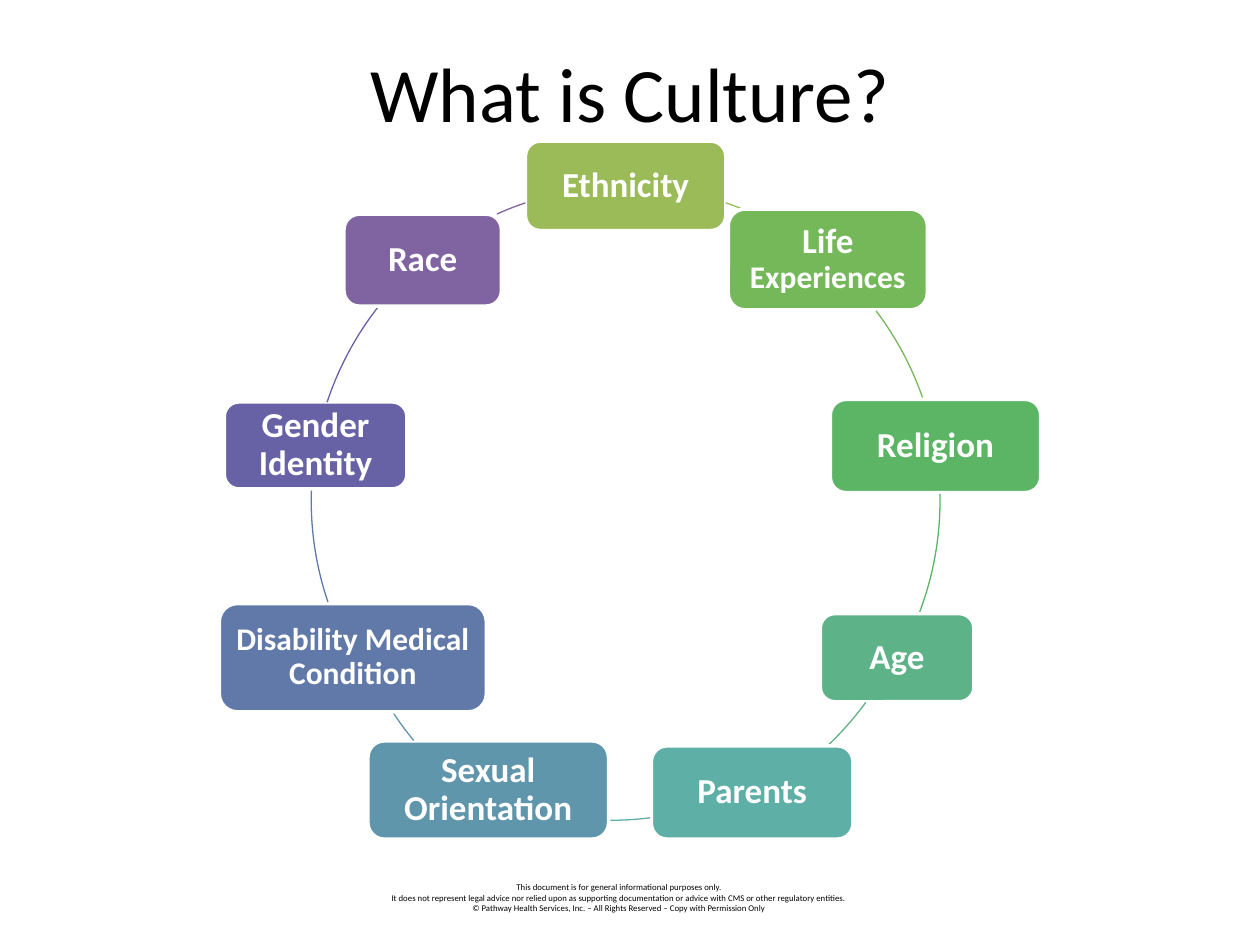
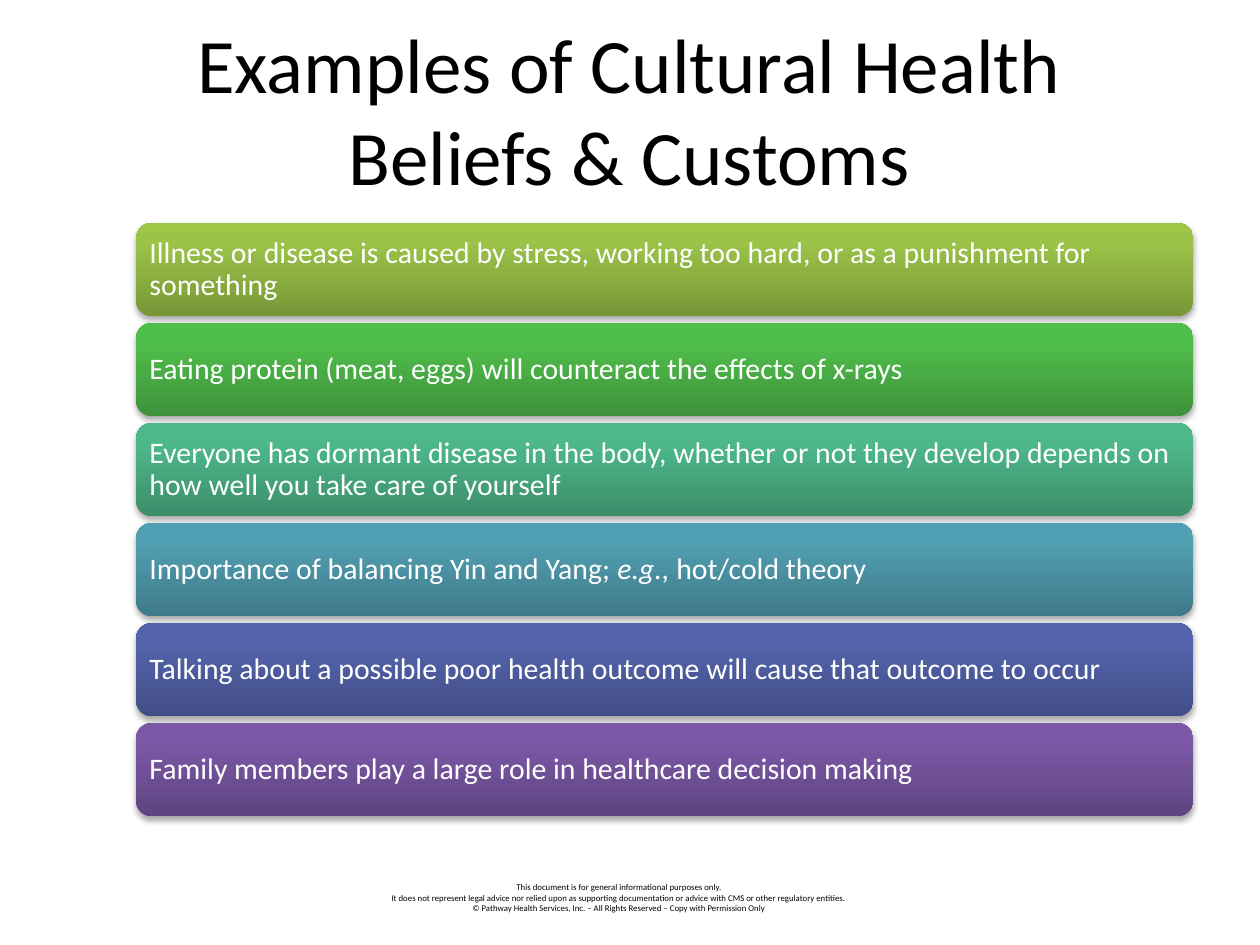
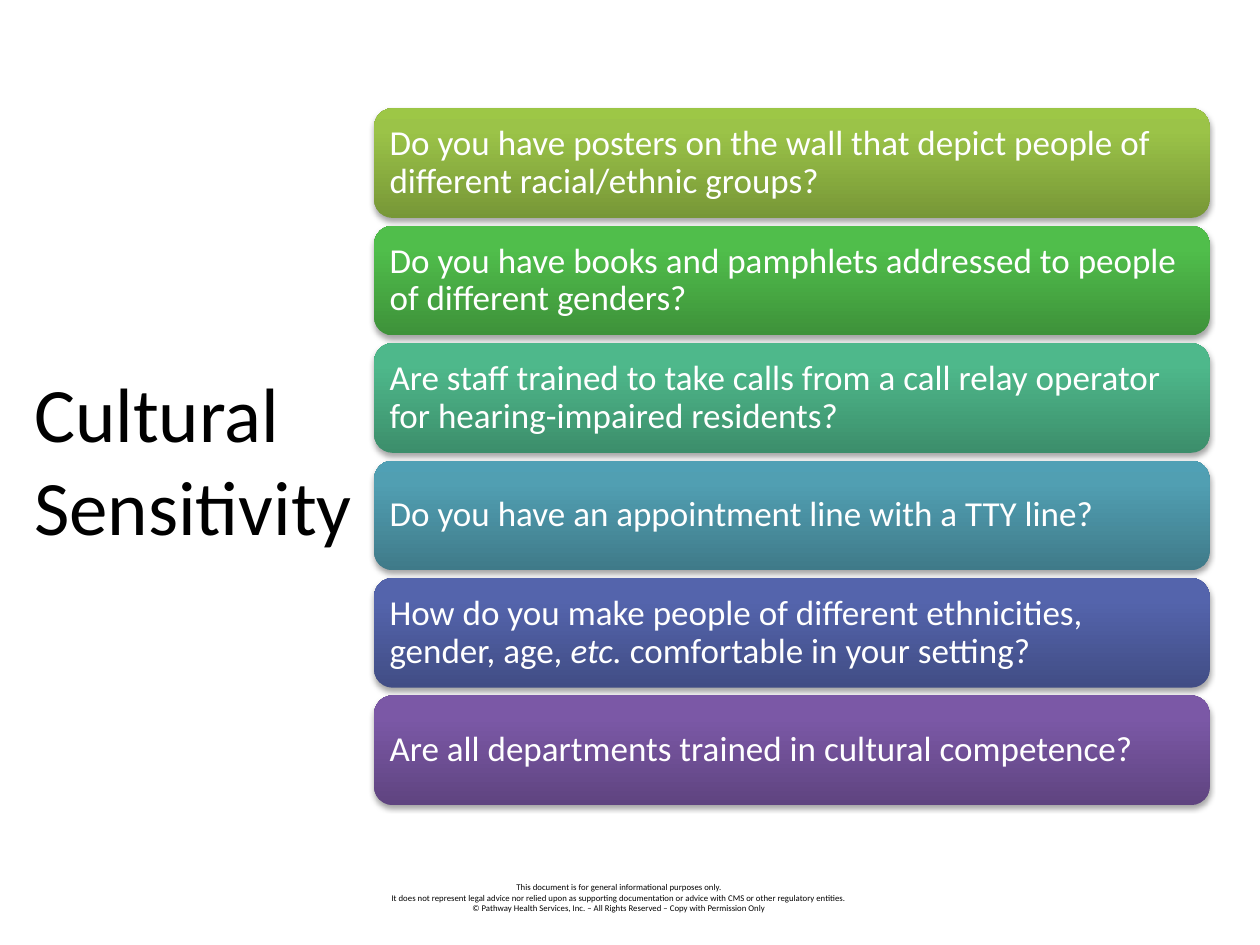
from copy import deepcopy
from math import atan2, degrees

from lxml.etree import SubElement
from pptx import Presentation
from pptx.dml.color import RGBColor
from pptx.enum.shapes import MSO_SHAPE
from pptx.enum.text import MSO_ANCHOR, MSO_AUTO_SIZE, PP_ALIGN
from pptx.oxml.ns import qn
from pptx.util import Inches, Pt

FONT = "Calibri"
BLACK = RGBColor(0x00, 0x00, 0x00)
WHITE = RGBColor(0xFF, 0xFF, 0xFF)

# Bottom, upper and top colour of each band, in order down the page
BAND_GRADIENTS = [
    [RGBColor.from_string(code) for code in codes.split()]
    for codes in (
        "779737 9BC348 9DC746",
        "3E923A 50BE4B 4FC149",
        "3C8E6B 4EB88B 4CBB8C",
        "3F7A89 519FB2 50A0B5",
        "414D85 5464AC 5363AF",
        "5F4480 7B58A6 7C57A8",
    )
]
GRADIENT_POSITIONS = (0, 0.8, 1)

RING_DIAMETER = 4.99
RING_CORNER = (2.47, 1.48)

# Spans, colour, box (left, top, width, height),
# then the arc to the next box: start, end and the corner of its circle
CULTURE_PARTS = [
    ([("Ethnicity", 20)], RGBColor(0x9B, 0xBB, 0x59), (4.17, 1.12, 1.59, 0.71),
     (5.76, 1.61), (5.90, 1.66), RING_CORNER),
    ([("Life ", 20), ("Experiences", 18)], RGBColor(0x75, 0xB8, 0x5A), (5.78, 1.66, 1.58, 0.80),
     (6.95, 2.47), (7.32, 3.16), RING_CORNER),
    ([("Religion", 20)], RGBColor(0x5C, 0xB5, 0x65), (6.59, 3.17, 1.67, 0.74),
     (7.46, 3.92), (7.30, 4.86), RING_CORNER),
    ([("Age", 20)], RGBColor(0x5D, 0xB2, 0x87), (6.51, 4.87, 1.22, 0.70),
     (6.88, 5.58), (6.58, 5.92), (2.36, 1.61)),
    ([("Parents", 20)], RGBColor(0x5E, 0xAF, 0xA6), (5.17, 5.92, 1.60, 0.74),
     (5.16, 6.49), (4.84, 6.51), (2.35, 1.52)),
    ([("Sexual Orientation", 20)], RGBColor(0x60, 0x96, 0xAC), (2.92, 5.88, 1.91, 0.78),
     (3.28, 5.88), (3.11, 5.65), (2.71, 1.79)),
    ([("Disability Medical Condition", 18)], RGBColor(0x61, 0x79, 0xA8), (1.74, 4.79, 2.12, 0.86),
     (2.60, 4.78), (2.47, 3.89), RING_CORNER),
    ([("Gender Identity", 20)], RGBColor(0x67, 0x62, 0xA5), (1.78, 3.19, 1.45, 0.69),
     (2.59, 3.19), (3.00, 2.43), RING_CORNER),
    ([("Race", 20)], RGBColor(0x80, 0x64, 0xA2), (2.73, 1.70, 1.25, 0.73),
     (3.94, 1.69), (4.17, 1.61), RING_CORNER),
]

# Each band is a list of spans; every second span is italic
BELIEFS = [
    ["Illness or disease is caused by stress, working too hard, or as a punishment for something"],
    ["Eating protein (meat, eggs) will counteract the effects of x-rays"],
    ["Everyone has dormant disease in the body, whether or not they develop depends on "
     "how well you take care of yourself"],
    ["Importance of balancing Yin and Yang; ", "e.g., ", "hot/cold theory"],
    ["Talking about a possible poor health outcome will cause that outcome to occur"],
    ["Family members play a large role in healthcare decision making"],
]
QUESTIONS = [
    ["Do you have posters on the wall that depict people of different racial/ethnic groups?"],
    ["Do you have books and pamphlets addressed to people of different genders?"],
    ["Are staff trained to take calls from a call relay operator for hearing-impaired residents?"],
    ["Do you have an appointment line with a TTY line?"],
    ["How do you make people of different ethnicities, gender, age, ", "etc.",
     " comfortable in your setting?"],
    ["Are all departments trained in cultural competence?"],
]
FOOTER_LINES = [
    "This document is for general informational purposes only.",
    "It does not represent legal advice nor relied upon as supporting documentation "
    "or advice with CMS or other regulatory entities.",
    "© Pathway Health Services, Inc. – All Rights Reserved – Copy with Permission Only",
]


def set_font(font, size, color):
    font.name = FONT
    font.size = Pt(size)
    font.color.rgb = color


def add_page(deck, title, left, top, width, height, align=PP_ALIGN.CENTER):
    page = deck.slides.add_slide(deck.slide_layouts[5])
    box = page.shapes.title
    box.left, box.top = Inches(left), Inches(top)
    box.width, box.height = Inches(width), Inches(height)
    frame = box.text_frame
    frame.text = title
    frame.auto_size = MSO_AUTO_SIZE.NONE
    frame.vertical_anchor = MSO_ANCHOR.MIDDLE
    para = frame.paragraphs[0]
    para.alignment = align
    set_font(para.font, 44, BLACK)
    return page


def move_footer_to_layout(page):
    """Make the footer and hand it to the layout, so that every page shows it."""
    box = page.shapes.add_textbox(Inches(2.75), Inches(6.95), Inches(4.33), Inches(0.35))
    frame = box.text_frame
    frame.word_wrap = True
    frame.auto_size = MSO_AUTO_SIZE.SHAPE_TO_FIT_TEXT
    frame.text = "\n".join(FOOTER_LINES)
    for para in frame.paragraphs:
        para.alignment = PP_ALIGN.CENTER
        set_font(para.font, 5, BLACK)
    page.slide_layout.shapes.element.append(box.element)


def add_rounded_box(page, left, top, width, height, margin, align):
    """Add a rounded box and return it with its only paragraph."""
    box = page.shapes.add_shape(MSO_SHAPE.ROUNDED_RECTANGLE, Inches(left), Inches(top),
                                Inches(width), Inches(height))
    box.shadow.inherit = False
    frame = box.text_frame
    frame.word_wrap = True
    frame.vertical_anchor = MSO_ANCHOR.MIDDLE
    frame.margin_left = frame.margin_right = Inches(margin)
    frame.margin_top = frame.margin_bottom = Inches(margin)
    para = frame.paragraphs[0]
    para.alignment = align
    para.line_spacing = 0.9
    return box, para


def add_culture_box(page, spans, color, place):
    box, para = add_rounded_box(page, *place, 0.08, PP_ALIGN.CENTER)
    box.fill.solid()
    box.fill.fore_color.rgb = color
    box.line.color.rgb = WHITE
    box.line.width = Pt(2)
    for text, size in spans:
        span = para.add_run()
        span.text = text
        set_font(span.font, size, WHITE)
        span.font.bold = True


def add_ring_arc(page, color, start, end, corner):
    """Draw the clockwise part of a circle from start to end."""
    left, top = corner
    radius = RING_DIAMETER / 2
    arc = page.shapes.add_shape(MSO_SHAPE.ARC, Inches(left), Inches(top),
                                Inches(RING_DIAMETER), Inches(RING_DIAMETER))
    arc.shadow.inherit = False
    arc.fill.background()
    arc.line.color.rgb = color
    arc.line.width = Pt(0.75)
    for index, (x, y) in enumerate((start, end)):
        angle = degrees(atan2(y - top - radius, x - left - radius)) % 360
        arc.adjustments[index] = angle * 0.6  # 60000 units a degree, 100000 a whole


def fill_gradient(box, colors):
    box.fill.gradient()
    box.fill.gradient_angle = 90
    stop_list = box.element.spPr.find(qn("a:gradFill")).find(qn("a:gsLst"))
    stop_list.insert(1, deepcopy(stop_list[0]))
    for stop, position, color in zip(box.fill.gradient_stops, GRADIENT_POSITIONS, colors):
        stop.position = position
        stop.color.rgb = color


def add_soft_shadow(box):
    effects = box.element.spPr.find(qn("a:effectLst"))
    shadow = SubElement(effects, qn("a:outerShdw"), blurRad="40000", dist="23000",
                        dir="5400000", rotWithShape="0")
    color = SubElement(shadow, qn("a:srgbClr"), val="000000")
    SubElement(color, qn("a:alpha"), val="35000")


def add_bands(page, bands, left, top, width, height, bottom, size, margin):
    """Spread equal bands from top to bottom."""
    pitch = (bottom - top - height) / (len(bands) - 1)
    for row, (spans, colors) in enumerate(zip(bands, BAND_GRADIENTS)):
        box, para = add_rounded_box(page, left, top + row * pitch, width, height,
                                    margin, PP_ALIGN.LEFT)
        fill_gradient(box, colors)
        add_soft_shadow(box)
        box.line.fill.background()
        for index, text in enumerate(spans):
            span = para.add_run()
            span.text = text
            if index % 2:
                span.font.italic = True
        set_font(para.font, size, WHITE)


def main():
    deck = Presentation()
    deck.slide_width, deck.slide_height = Inches(10), Inches(7.5)

    page = add_page(deck, "What is Culture?", 0.5, 0.1, 9, 1.25)
    move_footer_to_layout(page)
    for spans, color, place, start, end, corner in CULTURE_PARTS:
        add_culture_box(page, spans, color, place)
        add_ring_arc(page, color, start, end, corner)

    page = add_page(deck, "Examples of Cultural Health Beliefs & Customs", 0.8, 0, 8.39, 1.73)
    add_bands(page, BELIEFS, 1.08, 1.77, 8.39, 0.74, bottom=6.48, size=17, margin=0.07)

    page = add_page(deck, "Cultural Sensitivity", 0.17, 1.67, 2.81, 3.93, PP_ALIGN.LEFT)
    add_bands(page, QUESTIONS, 2.97, 0.86, 6.63, 0.87, bottom=6.39, size=20, margin=0.08)

    deck.save("out.pptx")


if __name__ == "__main__":
    main()
